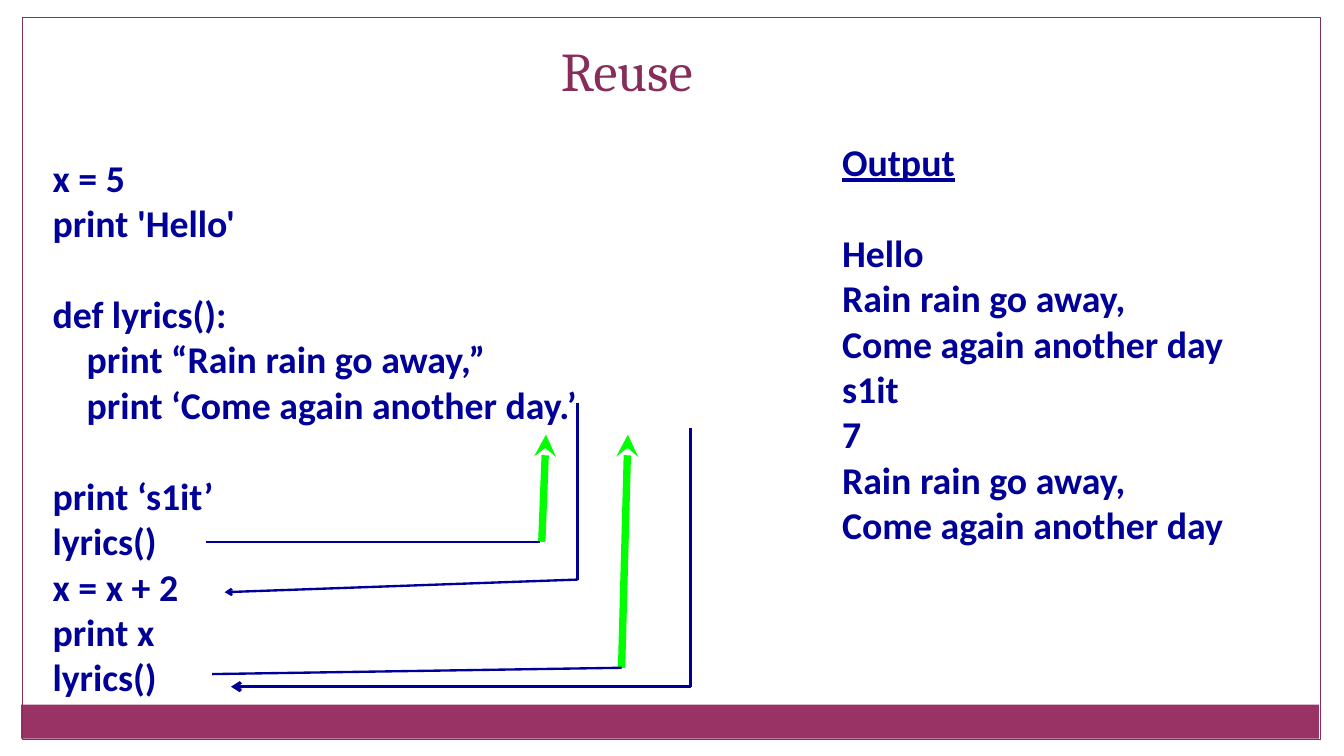
from lxml.etree import SubElement
from pptx import Presentation
from pptx.dml.color import RGBColor
from pptx.enum.shapes import MSO_CONNECTOR, MSO_SHAPE
from pptx.enum.text import MSO_ANCHOR, PP_ALIGN
from pptx.oxml.ns import qn
from pptx.util import Pt

PLUM = RGBColor(0x99, 0x33, 0x66)
WINE = RGBColor(0x87, 0x2D, 0x5A)
NAVY = RGBColor(0x00, 0x00, 0x99)
LIME = RGBColor(0x00, 0xFF, 0x00)

COLS, ROWS, CELL = 64, 36, 20
GAP = Pt(43.5)
INDENT = Pt(32.5)

HEAD = {"name": "Cambria", "size": Pt(52)}
BODY = {"name": "Calibri", "size": Pt(36), "bold": True}

CODE = """x = 5
print 'Hello'

def lyrics():
    print “Rain rain go away,”
    print ‘Come again another day.’

print ‘s1it’
lyrics()
x = x + 2
print x
lyrics()"""

OUTPUT = """Output

Hello
Rain rain go away,
Come again another day
s1it
7
Rain rain go away,
Come again another day"""


def grid(*cells):
    return [Pt(cell * CELL) for cell in cells]


class Board:
    def __init__(self, deck):
        self.slide = deck.slides.add_slide(deck.slide_layouts[6])
        self.shapes = self.slide.shapes

    def box(self, area, fill=None, edge=None):
        shape = self.shapes.add_shape(MSO_SHAPE.RECTANGLE, *grid(*area))
        shape.shadow.inherit = False
        if fill is None:
            shape.fill.background()
        else:
            shape.fill.solid()
            shape.fill.fore_color.rgb = fill
        if edge is None:
            shape.line.fill.background()
        else:
            shape.line.color.rgb = edge
            shape.line.width = Pt(0.75)

    def text(self, area, words, style, color, anchor, align=PP_ALIGN.LEFT, pad=0, under=()):
        frame = self.shapes.add_textbox(*grid(*area)).text_frame
        form = {"word_wrap": True, "vertical_anchor": anchor}
        for side, size in zip(("left", "top", "right", "bottom"), (2 * pad, pad) * 2):
            form["margin_" + side] = Pt(size)
        for key, value in form.items():
            setattr(frame, key, value)
        para, gap = frame.paragraphs[0], 0
        for line in words.splitlines():
            if not line:
                gap = GAP
                continue
            if para.runs:
                para = frame.add_paragraph()
            para.alignment = align
            para.space_before = gap
            gap = 0
            if line.startswith(" "):
                para._p.get_or_add_pPr().set("marL", str(INDENT))
            run = para.add_run()
            run.text = line.strip()
            for key, value in style.items():
                setattr(run.font, key, value)
            run.font.color.rgb = color
            if line in under:
                run.font.underline = True

    def line(self, start, end, color=NAVY, width=2.25, tip=None):
        link = self.shapes.add_connector(MSO_CONNECTOR.STRAIGHT, *grid(*start, *end))
        link.line.color.rgb = color
        link.line.width = Pt(width)
        if tip:
            SubElement(link.line._get_or_add_ln(), qn("a:tailEnd"), type=tip)
        SubElement(link._element.spPr, qn("a:effectLst"))


def main():
    deck = Presentation()
    deck.slide_width, deck.slide_height = grid(COLS, ROWS)
    board = Board(deck)

    board.box((1, 33.55, 61.8, 1.62), fill=PLUM)
    board.box((1.08, 0.83, 61.8, 34.38), edge=WINE)
    board.text((0, 1.2, 59.7, 4), "Reuse", HEAD, WINE, MSO_ANCHOR.BOTTOM, PP_ALIGN.CENTER, 6)
    board.text((2.5, 4.93, 32.2, 28.37), CODE, BODY, NAVY, MSO_ANCHOR.BOTTOM)
    board.text((40.1, 6.6, 22.8, 21.8), OUTPUT, BODY, NAVY, MSO_ANCHOR.TOP, under=("Output",))

    for base, peak in (((25.8, 25.8), (26, 20.7)), ((29.6, 31.8), (29.9, 20.7))):
        board.line(base, peak, LIME, 7, "stealth")
    board.line((9.8, 25.8), (25.7, 25.8))
    board.line((10.1, 32.1), (29.6, 31.8))

    for top, turn, back, width in (
        ((27.5, 19.2), (27.5, 27.6), (10.7, 28.2), 2.25),
        ((32.9, 20.4), (32.9, 32.7), (11, 32.7), 3),
    ):
        board.line(top, turn, width=width)
        board.line(turn, back, width=width, tip="arrow")

    deck.save("out.pptx")


if __name__ == "__main__":
    main()
